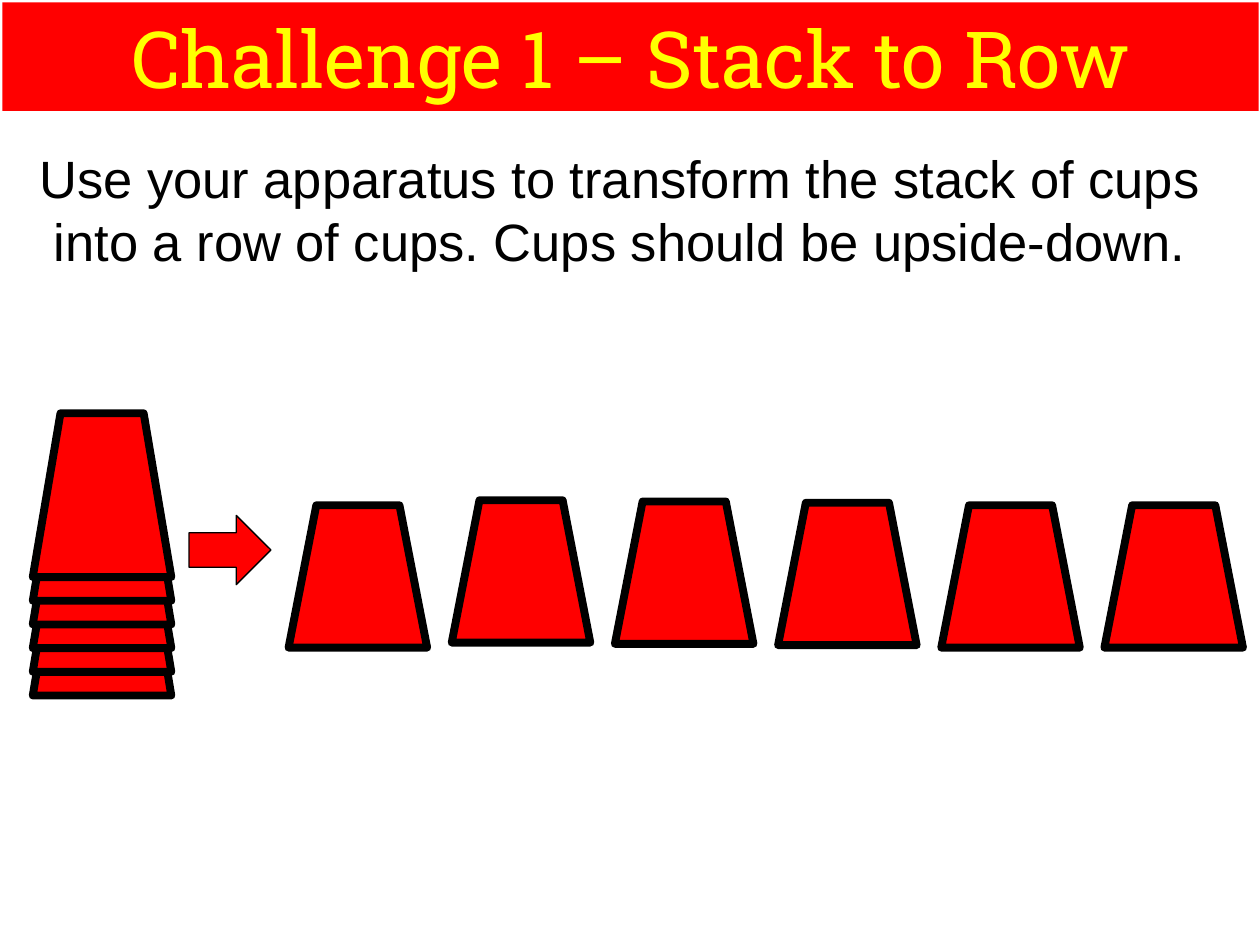
from lxml import etree
from pptx import Presentation
from pptx.dml.color import RGBColor
from pptx.enum.shapes import MSO_SHAPE as SHAPE
from pptx.enum.text import MSO_ANCHOR as ANCHOR, PP_ALIGN as ALIGN
from pptx.oxml.ns import qn
from pptx.util import Inches, Pt

RED, BLACK, YELLOW = "FF0000", "000000", "FFFF00"


def add_red_shape(kind, x, y, w, h, line_width=0):
    """Add a red preset shape, outlined in black if line_width is given."""
    sp = s.shapes.add_shape(kind, Inches(x), Inches(y), Inches(w), Inches(h))
    sp.shadow.inherit = False
    sp.fill.solid()
    sp.fill.fore_color.rgb = RGBColor.from_string(RED)
    if line_width:
        sp.line.color.rgb = RGBColor.from_string(BLACK)
        sp.line.width = Pt(line_width)
        etree.SubElement(sp.line._get_or_add_ln(), qn("a:round"))
    else:
        sp.line.fill.background()
    return sp


def write_centred(tf, text, size, font, color):
    tf.word_wrap = True
    p = tf.paragraphs[0]
    p.text = text
    p.alignment = ALIGN.CENTER
    p.font.size = Pt(size)
    p.font.name = font
    p.font.color.rgb = RGBColor.from_string(color)


prs = Presentation()
prs.slide_width, prs.slide_height = Inches(10), Inches(7.5)
s = prs.slides.add_slide(prs.slide_layouts[6])

# Instructions and title
box = s.shapes.add_textbox(Inches(0), Inches(1.11), Inches(9.84), Inches(1.11))
write_centred(
    box.text_frame,
    "Use your apparatus to transform the stack of cups into a row of cups. "
    "Cups should be upside-down.",
    30, "Arial", BLACK)

title = add_red_shape(SHAPE.RECTANGLE, 0.02, 0.02, 9.97, 0.86)
tf = title.text_frame
tf.margin_left = tf.margin_right = tf.margin_top = tf.margin_bottom = 0
tf.vertical_anchor = ANCHOR.MIDDLE
write_centred(tf, "Challenge 1 – Stack to Row", 45, "Roboto Slab", YELLOW)

# Cups: the stack from the bottom up, then the row from left to right
stack = [(0.26, 4.22 - 0.188 * i, 1.3) for i in range(6)]
row_tops = [4.01, 3.97, 3.98, 3.99, 4.01, 4.01]
row = [(2.29 + 1.295 * i, top, 1.13) for i, top in enumerate(row_tops)]
for x, y, height in stack + row:
    cup = add_red_shape(SHAPE.FLOWCHART_MANUAL_OPERATION, x, y, 1.1, height, 4.5)
    cup.rotation = 180

add_red_shape(SHAPE.RIGHT_ARROW, 1.5, 4.09, 0.65, 0.55, 0.75)

prs.save("out.pptx")
